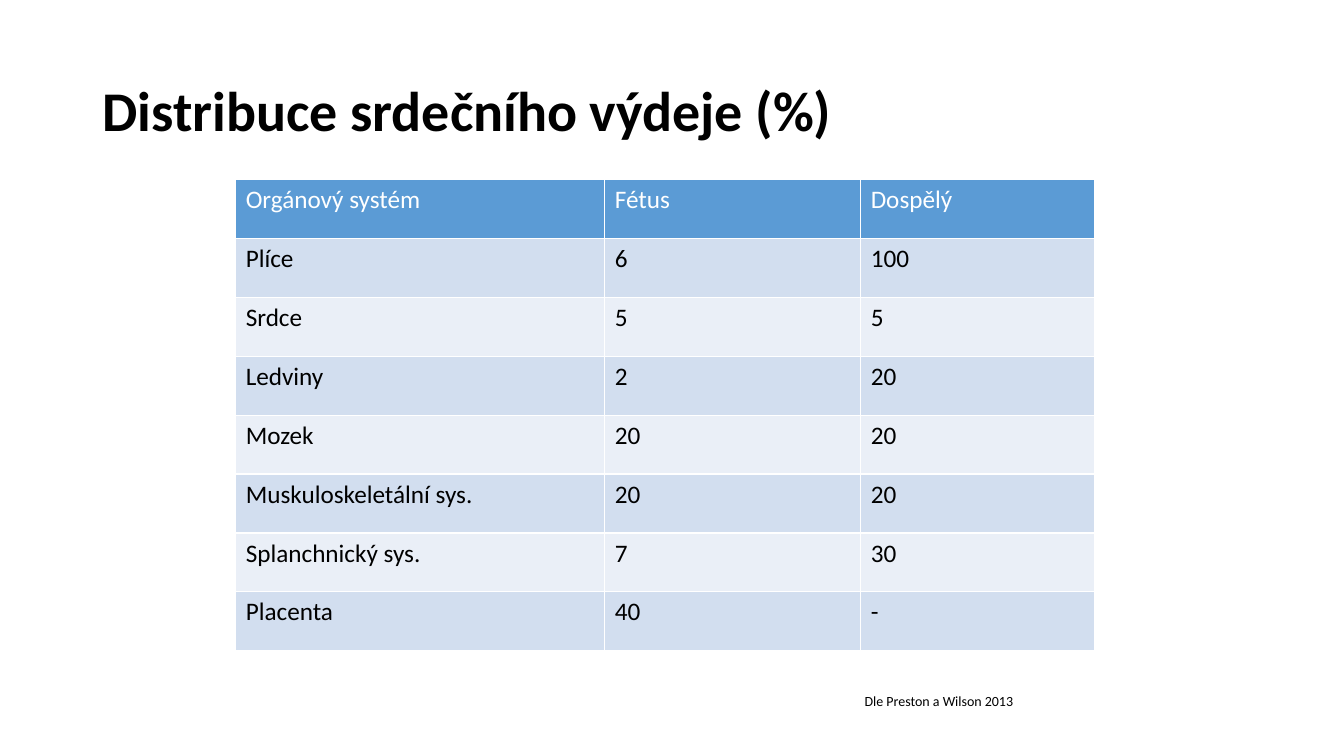
from dataclasses import dataclass

from lxml.etree import SubElement
from pptx import Presentation
from pptx.dml.color import RGBColor
from pptx.enum.text import MSO_ANCHOR as Anchor
from pptx.oxml.ns import qn
from pptx.slide import Slide
from pptx.table import _Cell as Cell
from pptx.text.text import TextFrame
from pptx.util import Cm, Pt

FONT = "Calibri"
BLACK, WHITE = "000000", "FFFFFF"
HEADER_FILL = "5B9BD5"
BAND_FILLS = ("EAEFF7", "D2DEEF")
COLUMN_WIDTHS = (9.3, 6.45, 5.89)
ROW_HEIGHT = 1.485


@dataclass
class Label:
    text: str
    left: float
    top: float
    width: float
    height: float
    size: int
    bold: bool = False
    anchor: Anchor = Anchor.TOP
    line_spacing: float = 1.0


@dataclass
class OrganRow:
    organ: str
    fetus: str
    adult: str


LABELS = [
    Label("Distribuce srdečního výdeje (%)", 2.34, 1.02, 29.21, 3.68, 40,
          bold=True, anchor=Anchor.MIDDLE, line_spacing=0.9),
    Label("Dle Preston a Wilson 2013", 21.54, 17.32, 5.99, 0.69, 10),
]

ROWS = [
    OrganRow("Orgánový systém", "Fétus", "Dospělý"),
    OrganRow("Plíce", "6", "100"),
    OrganRow("Srdce", "5", "5"),
    OrganRow("Ledviny", "2", "20"),
    OrganRow("Mozek", "20", "20"),
    OrganRow("Muskuloskeletální sys.", "20", "20"),
    OrganRow("Splanchnický sys.", "7", "30"),
    OrganRow("Placenta", "40", "-"),
]


def rgb(color: str) -> RGBColor:
    return RGBColor.from_string(color)


def write(tf: TextFrame, text: str, size: int, color: str, bold: bool = False) -> None:
    tf.text = text
    font = tf.paragraphs[0].runs[0].font
    font.name, font.size, font.bold = FONT, Pt(size), bold
    font.color.rgb = rgb(color)


def add_label(s: Slide, label: Label) -> None:
    sp = s.shapes.add_textbox(Cm(label.left), Cm(label.top), Cm(label.width), Cm(label.height))
    tf = sp.text_frame
    tf.word_wrap = True
    tf.vertical_anchor = label.anchor
    write(tf, label.text, label.size, BLACK, label.bold)
    tf.paragraphs[0].line_spacing = label.line_spacing


def add_borders(cell: Cell) -> None:
    """Must run before the cell is filled: borders come first in tcPr."""
    tc_pr = cell._tc.get_or_add_tcPr()
    for side in ("lnL", "lnR", "lnT", "lnB"):
        ln = SubElement(tc_pr, qn(f"a:{side}"), w=str(Pt(1)))
        fill = SubElement(ln, qn("a:solidFill"))
        SubElement(fill, qn("a:srgbClr"), val=WHITE)


def add_output_table(s: Slide, rows: list[OrganRow]) -> None:
    frame = s.shapes.add_table(len(rows), len(COLUMN_WIDTHS), Cm(5.94), Cm(4.52),
                               Cm(sum(COLUMN_WIDTHS)), Cm(ROW_HEIGHT * len(rows)))
    table = frame.table
    for column, width in zip(table.columns, COLUMN_WIDTHS):
        column.width = Cm(width)
    for i, row in enumerate(rows):
        table.rows[i].height = Cm(ROW_HEIGHT)
        fill, color = (BAND_FILLS[i % 2], BLACK) if i else (HEADER_FILL, WHITE)
        for j, text in enumerate((row.organ, row.fetus, row.adult)):
            cell = table.cell(i, j)
            add_borders(cell)
            cell.fill.solid()
            cell.fill.fore_color.rgb = rgb(fill)
            write(cell.text_frame, text, 18, color)


def main() -> None:
    prs = Presentation()
    prs.slide_width, prs.slide_height = Cm(33.87), Cm(19.05)
    s = prs.slides.add_slide(prs.slide_layouts[6])
    title, citation = LABELS
    add_label(s, title)
    add_output_table(s, ROWS)
    add_label(s, citation)
    prs.save("out.pptx")


if __name__ == "__main__":
    main()
